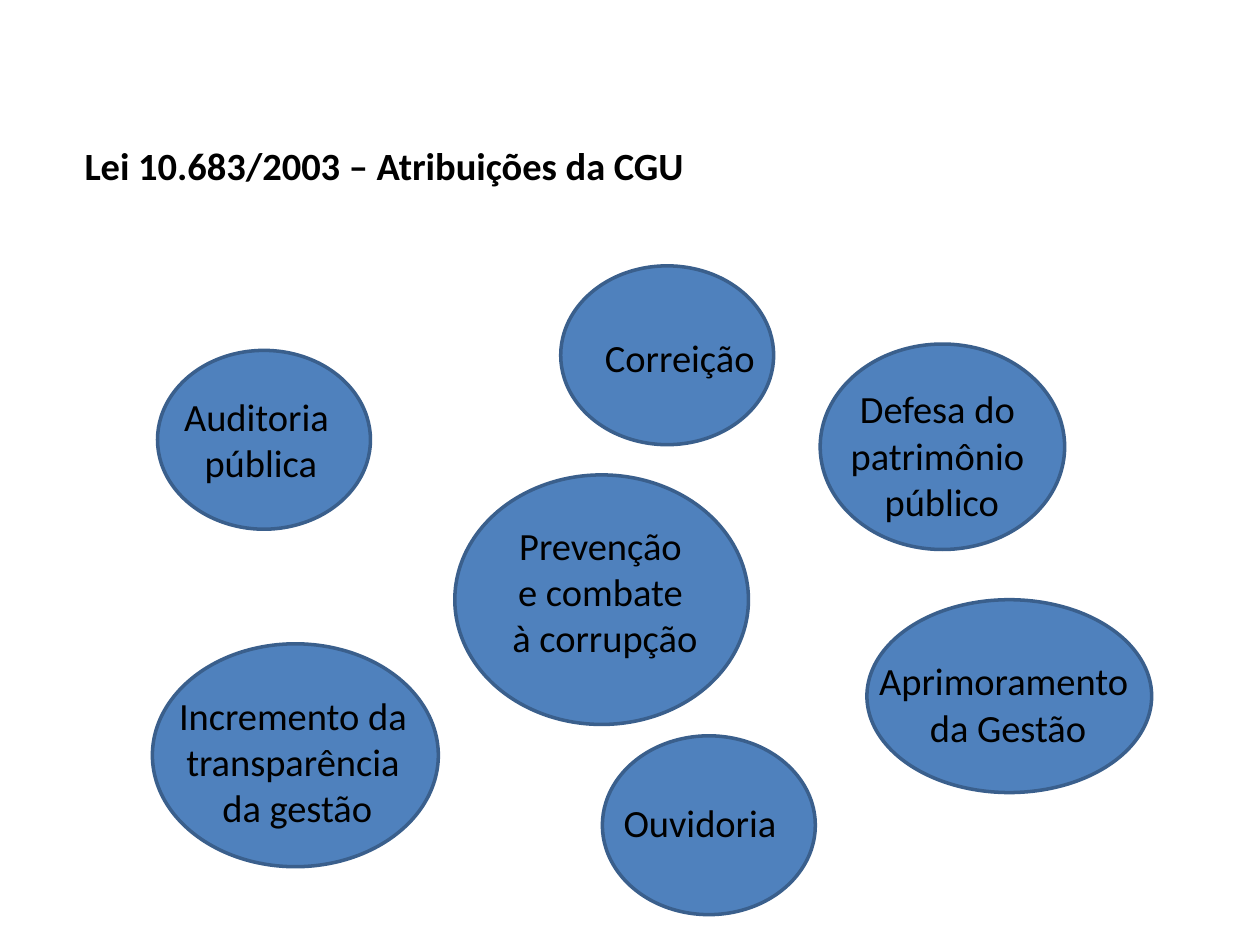
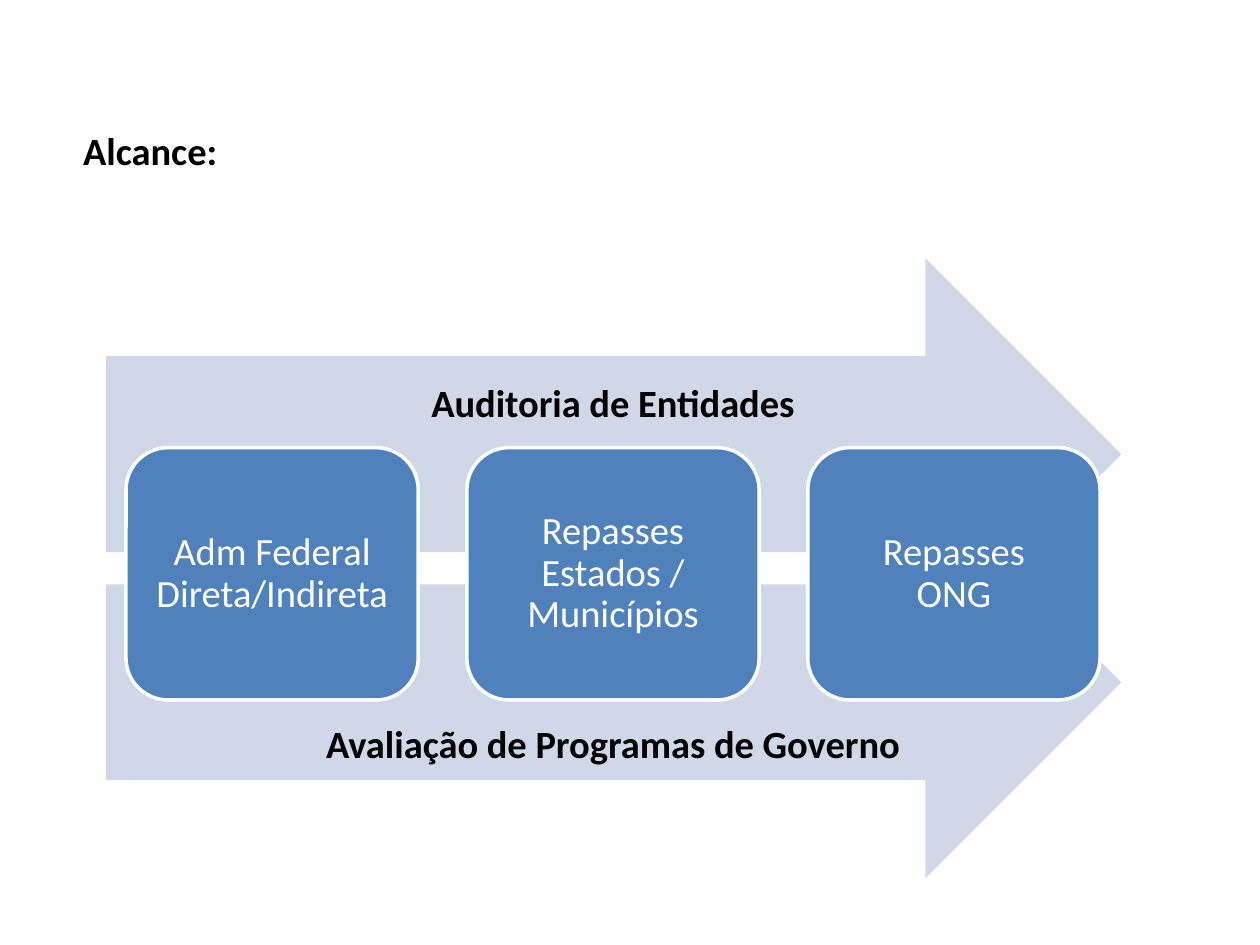
from dataclasses import dataclass

from pptx import Presentation
from pptx.dml.color import RGBColor
from pptx.enum.shapes import MSO_SHAPE
from pptx.enum.text import MSO_ANCHOR, PP_ALIGN
from pptx.util import Pt


@dataclass(frozen=True)
class Theme:
    font: str = "Calibri"
    size: float = 22
    line_width: float = 2
    text: str = "000000"
    light: str = "FFFFFF"
    blue: str = "4F81BD"
    outline: str = "3A5F8C"
    pale: str = "D0D8E8"


THEME = Theme()


def write(shape, text, color=THEME.text, bold=False, align=PP_ALIGN.CENTER,
          anchor=MSO_ANCHOR.TOP, margins=(7.2, 3.6), spacing=None):
    """Fill a shape with text, one paragraph for each line."""
    frame = shape.text_frame
    frame.word_wrap = True
    frame.vertical_anchor = anchor
    frame.margin_left = frame.margin_right = Pt(margins[0])
    frame.margin_top = frame.margin_bottom = Pt(margins[1])
    for index, line in enumerate(text.split("\n")):
        para = frame.add_paragraph() if index else frame.paragraphs[0]
        para.alignment = align
        para.line_spacing = spacing
        span = para.add_run()
        span.text = line
        span.font.name = THEME.font
        span.font.size = Pt(THEME.size)
        span.font.bold = bold
        span.font.color.rgb = RGBColor.from_string(color)


class DeckBuilder:
    """Holds the deck and its current page."""

    def __init__(self):
        self.deck = Presentation()
        self.deck.slide_width = Pt(720)
        self.deck.slide_height = Pt(540)
        self.page = None

    def new_page(self):
        self.page = self.deck.slides.add_slide(self.deck.slide_layouts[6])

    def label(self, place, text, **style):
        box = self.page.shapes.add_textbox(*map(Pt, place))
        write(box, text, **style)

    def title(self, place, text, **style):
        self.label(place, text, bold=True, align=PP_ALIGN.LEFT, **style)

    def shape(self, kind, place, fill, line=None):
        shape = self.page.shapes.add_shape(kind, *map(Pt, place))
        shape.shadow.inherit = False
        shape.fill.solid()
        shape.fill.fore_color.rgb = RGBColor.from_string(fill)
        if line:
            shape.line.color.rgb = RGBColor.from_string(line)
            shape.line.width = Pt(THEME.line_width)
        else:
            shape.line.fill.background()
        return shape

    def bubble(self, oval, label, text, **style):
        self.shape(MSO_SHAPE.OVAL, oval, THEME.blue, THEME.outline)
        self.label(label, text, **style)

    def arrow(self, place):
        self.shape(MSO_SHAPE.RIGHT_ARROW, place, THEME.pale)

    def card(self, place, text, side_margin):
        card = self.shape(MSO_SHAPE.ROUNDED_RECTANGLE, place, THEME.blue, THEME.light)
        write(card, text, color=THEME.light, anchor=MSO_ANCHOR.MIDDLE,
              margins=(side_margin, 13), spacing=0.9)


def build_duties(builder):
    builder.new_page()
    builder.title((41.8, 77.8, 613.4, 33.1), "Lei 10.683/2003 – Atribuições da CGU",
                  margins=(6.5, 3.6))

    # Duties: ellipse, label box, text
    small = (121.7, 102.2)
    duties = [
        ((468.7, 196.6, 139.7, 117.4), (429.8, 216.7, 216.7, 87.1),
         "Defesa do \npatrimônio \npúblico"),
        ((259.9, 271.4, 167.8, 142.6), (275.8, 294.5, 139.7, 87.1),
         "Prevenção \ne combate \nà corrupção"),
        ((320.4, 151.9, *small), (320.4, 187.2, 136.1, 33.8), "Correição"),
        ((87.1, 367.9, 163.4, 127.4), (79.9, 391.7, 180, 89.3),
         "Incremento da \ntransparência \nda gestão"),
        ((90, 200.2, *small), (82.1, 221, 133.9, 60.5), "Auditoria \npública"),
        ((495.4, 342.7, 162.7, 110.2), (490.3, 372.2, 171.4, 60.5),
         "Aprimoramento \nda Gestão"),
    ]
    for oval, label, text in duties:
        builder.bubble(oval, label, text)
    builder.bubble((344.2, 420.5, *small), (349.2, 452.9, 111.6, 33.8), "Ouvidoria",
                   align=PP_ALIGN.LEFT)


def build_scope(builder):
    builder.new_page()

    # Arrows behind the cards
    for top in (277.9, 147.6):
        builder.arrow((60.5, top, 580.3, 223.9))

    # Row of equal cards
    left, pitch = 72, 194.8
    cards = [("Adm Federal Direta/Indireta", 3),
             ("Repasses Estados / Municípios", 13),
             ("Repasses ONG", 13)]
    for index, (text, side_margin) in enumerate(cards):
        builder.card((left + index * pitch, 255.8, 167, 144.2), text, side_margin)

    # Arrow captions and title
    for top, text in ((408.2, "Avaliação de Programas de Governo"),
                      (213.1, "Auditoria de Entidades")):
        builder.label((left, top, 556.6, 33.1), text, bold=True)
    builder.title((47.5, 61.9, 472.3, 51.1), "Alcance:",
                  anchor=MSO_ANCHOR.MIDDLE, margins=(0, 0), spacing=0.9)


def main():
    builder = DeckBuilder()
    build_duties(builder)
    build_scope(builder)
    builder.deck.save("out.pptx")


if __name__ == "__main__":
    main()
